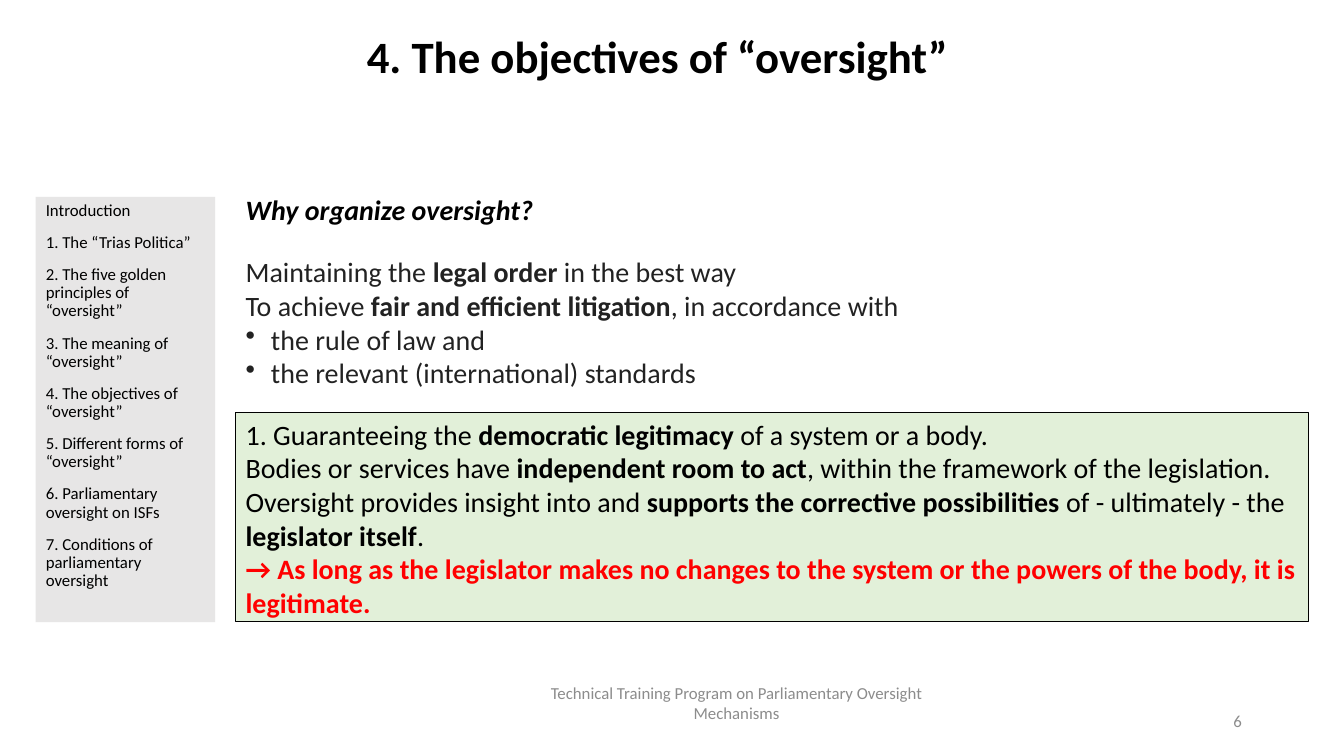
import pptx
import pptx.util
import pptx.dml.color
import pptx.enum.shapes
import pptx.enum.text
import pptx.oxml.ns
import lxml.etree

Cm, Pt = pptx.util.Cm, pptx.util.Pt
RGBColor = pptx.dml.color.RGBColor
PP_ALIGN = pptx.enum.text.PP_ALIGN
ANCHOR = pptx.enum.text.MSO_ANCHOR
AUTO_SIZE = pptx.enum.text.MSO_AUTO_SIZE

BLACK = RGBColor(0x00, 0x00, 0x00)
CHARCOAL = RGBColor(0x22, 0x22, 0x22)
FOOTER_GREY = RGBColor(0x8C, 0x8C, 0x8C)
PANEL_GREY = RGBColor(0xE7, 0xE6, 0xE6)
PALE_GREEN = RGBColor(0xE2, 0xF0, 0xD9)
RED = RGBColor(0xFF, 0x00, 0x00)
FONT = "Calibri"

CHAPTERS = [
    "Introduction",
    "1. The “Trias Politica”",
    "2. The five golden principles of “oversight”",
    "3. The meaning of “oversight”",
    "4. The objectives of “oversight”",
    "5. Different forms of “oversight”",
    "6. Parliamentary oversight on ISFs",
    "7. Conditions of parliamentary oversight",
]
# Text between double asterisks is bold
GOALS = [
    "Maintaining the **legal order **in the best way",
    "To achieve **fair and efficient litigation**, in accordance with",
]
CRITERIA = ["the rule of law and", "the relevant (international) standards"]
LEGITIMACY = [
    "1. Guaranteeing the **democratic legitimacy **of a system or a body.",
    "Bodies or services have **independent room to act**, within the framework of the "
    "legislation. Oversight provides insight into and **supports the corrective "
    "possibilities **of - ultimately - the **legislator itself**.",
]
CONCLUSION = ("**→ As long as the legislator makes no changes to the system or the powers "
              "of the body, it is legitimate.**")


def place(part, box):
    part.left, part.top, part.width, part.height = (Cm(length) for length in box)


def prepare(frame, anchor=ANCHOR.TOP):
    frame.word_wrap = True
    frame.auto_size = AUTO_SIZE.NONE
    frame.vertical_anchor = anchor


def next_paragraph(frame):
    first = frame.paragraphs[0]
    return frame.add_paragraph() if first.runs else first


def write(paragraph, marked_text, size, color, italic=False, align=PP_ALIGN.LEFT):
    paragraph.alignment = align
    for index, piece in enumerate(marked_text.split("**")):
        if piece:
            run = paragraph.add_run()
            run.text = piece
            run.font.name = FONT
            run.font.size = Pt(size)
            run.font.bold = index % 2 == 1
            run.font.italic = italic
            run.font.color.rgb = color


def set_bullet(paragraph, char=None, indent=0):
    properties = paragraph._p.get_or_add_pPr()
    properties.set("marL", str(Cm(indent)))
    properties.set("indent", str(-Cm(indent)))
    tag = pptx.oxml.ns.qn("a:buChar" if char else "a:buNone")
    bullet = lxml.etree.SubElement(properties, tag)
    if char:
        bullet.set("char", char)


def add_heading(slide, box):
    title = slide.shapes.title
    place(title, box)
    prepare(title.text_frame)
    paragraph = title.text_frame.paragraphs[0]
    write(paragraph, "**4. The objectives of “oversight”**", 32, BLACK, align=PP_ALIGN.CENTER)
    paragraph.line_spacing = 0.9


def add_outline(slide, box):
    outline = slide.placeholders[1]
    place(outline, box)
    outline.fill.solid()
    outline.fill.fore_color.rgb = PANEL_GREY
    prepare(outline.text_frame)
    for number, chapter in enumerate(CHAPTERS):
        paragraph = next_paragraph(outline.text_frame)
        set_bullet(paragraph)
        write(paragraph, chapter, 12, BLACK)
        paragraph.line_spacing = 0.9
        paragraph.space_before = Pt(10 if number else 0)


def add_text(slide, box, anchor=ANCHOR.TOP):
    frame = slide.shapes.add_textbox(*(Cm(length) for length in box)).text_frame
    prepare(frame, anchor)
    return frame


def add_reasons(slide, box):
    left, top, width, height = box
    # Question
    question = add_text(slide, (left, top, 13.13, 1.12))
    write(question.paragraphs[0], "**Why organize oversight?**", 20, BLACK, italic=True)

    # Goals and their criteria
    goals = add_text(slide, (left, top + 1.58, 23.83, 3.56))
    for goal in GOALS:
        write(next_paragraph(goals), goal, 20, CHARCOAL)
    for criterion in CRITERIA:
        paragraph = next_paragraph(goals)
        set_bullet(paragraph, "•", 0.64)
        write(paragraph, criterion, 20, CHARCOAL)

    # Legitimacy panel fills the rest of the region
    panel_offset = 5.67
    panel = slide.shapes.add_shape(
        pptx.enum.shapes.MSO_SHAPE.RECTANGLE,
        Cm(left), Cm(top + panel_offset), Cm(width), Cm(height - panel_offset))
    panel.shadow.inherit = False
    panel.fill.solid()
    panel.fill.fore_color.rgb = PALE_GREEN
    panel.line.color.rgb = BLACK
    panel.line.width = Pt(0.75)
    prepare(panel.text_frame)
    for statement in LEGITIMACY:
        write(next_paragraph(panel.text_frame), statement, 20, BLACK)
    write(next_paragraph(panel.text_frame), CONCLUSION, 20, RED)


def add_footer(slide, box):
    left, top, width, height = box
    program = add_text(slide, (left, top, 11.43, height), ANCHOR.MIDDLE)
    write(program.paragraphs[0], "Technical Training Program on Parliamentary Oversight Mechanisms",
          12, FOOTER_GREY, align=PP_ALIGN.CENTER)
    number_width = 7.62
    number = add_text(slide, (left + width - number_width, top + 0.45, number_width, height),
                      ANCHOR.MIDDLE)
    write(number.paragraphs[0], "6", 12, FOOTER_GREY, align=PP_ALIGN.RIGHT)


def main():
    deck = pptx.Presentation()
    deck.slide_width, deck.slide_height = Cm(33.87), Cm(19.05)
    slide = deck.slides.add_slide(deck.slide_layouts[1])
    add_heading(slide, (7.62, 0.76, 17.91, 3.18))
    add_outline(slide, (0.9, 4.96, 4.52, 10.72))
    add_reasons(slide, (5.94, 4.72, 27.03, 10.95))
    add_footer(slide, (12.85, 17.2, 18.7, 1.02))
    deck.save("out.pptx")


if __name__ == "__main__":
    main()
